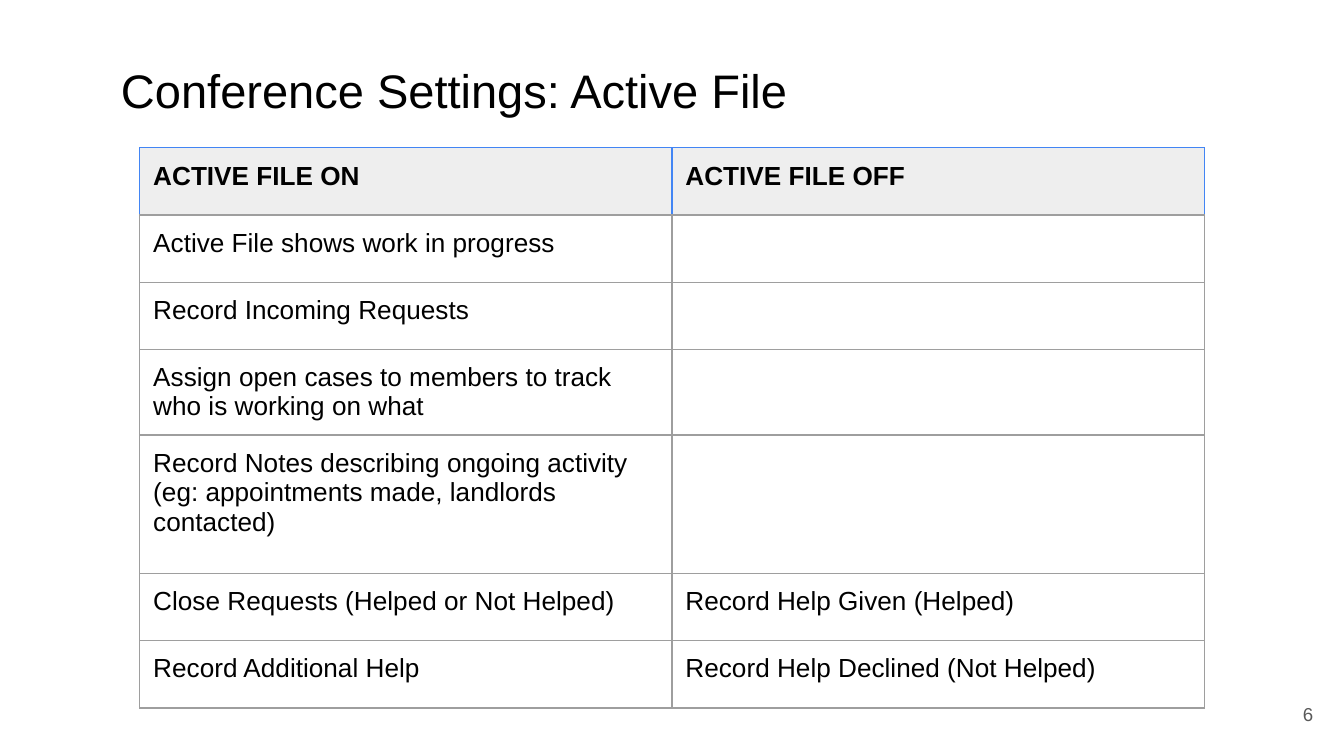
"""Build the Active File settings comparison slide."""
from typing import NamedTuple

from lxml.etree import SubElement
from pptx import Presentation
from pptx.dml.color import RGBColor
from pptx.enum.text import MSO_ANCHOR as ANCHOR, PP_ALIGN as ALIGN
from pptx.oxml.ns import qn
from pptx.util import Inches, Pt

COLORS = {"text": "000000", "number": "595959", "header": "EEEEEE",
          "blue": "4285F4", "gray": "9E9E9E", "page": "FFFFFF"}
INSET = Inches(0.1)


class Row(NamedTuple):
    """Texts and height of one table row."""
    on: str
    off: str = ""
    height: float = 0.5


ROWS = [
    Row("ACTIVE FILE ON", "ACTIVE FILE OFF"),
    Row("Active File shows work in progress"),
    Row("Record Incoming Requests"),
    Row("Assign open cases to members to track who is working on what"),
    Row("Record Notes describing ongoing activity "
        "(eg: appointments made, landlords contacted)", height=1.03),
    Row("Close Requests (Helped or Not Helped)", "Record Help Given (Helped)"),
    Row("Record Additional Help", "Record Help Declined (Not Helped)"),
]


def write(tf, text: str, *, size: float, color: str = "text",
          bold: bool = False, align=ALIGN.LEFT) -> None:
    """Write one formatted paragraph into a text frame."""
    tf.word_wrap = True
    p = tf.paragraphs[0]
    p.alignment = align
    p.font.size = Pt(size)
    if not text:
        return
    r = p.add_run()
    r.text = text
    r.font.name = "Arial"
    r.font.size = Pt(size)
    r.font.bold = bold
    r.font.color.rgb = RGBColor.from_string(COLORS[color])


def set_insets(target) -> None:
    """Give a cell or text frame equal margins."""
    target.margin_left = target.margin_right = INSET
    target.margin_top = target.margin_bottom = INSET


def set_border(cell, side: str, color: str) -> None:
    """Draw one side (L, R, T or B) of a cell."""
    tc_pr = cell._tc.get_or_add_tcPr()
    ln = SubElement(tc_pr, qn(f"a:ln{side}"), w=str(Pt(0.75)))
    SubElement(SubElement(ln, qn("a:solidFill")), qn("a:srgbClr"), val=COLORS[color])
    SubElement(ln, qn("a:prstDash"), val="solid")


def fill_cell(cell, text: str, row: int) -> None:
    """Format one table cell according to its row."""
    header = row == 0
    set_insets(cell)
    for side in "LRTB":
        set_border(cell, side, "blue" if header and side != "B" else "gray")
    if header:
        cell.fill.solid()
        cell.fill.fore_color.rgb = RGBColor.from_string(COLORS["header"])
    else:
        cell.fill.background()
    write(cell.text_frame, text, size=14, bold=header)


def add_comparison(slide, rows: list[Row]) -> None:
    """Add the two-column comparison table."""
    height = sum(row.height for row in rows)
    table = slide.shapes.add_table(len(rows), 2, Inches(1.04), Inches(1.1),
                                   Inches(7.92), Inches(height)).table
    table.horz_banding = False
    for i, row in enumerate(rows):
        table.rows[i].height = Inches(row.height)
        for j, text in enumerate((row.on, row.off)):
            fill_cell(table.cell(i, j), text, i)


def main() -> None:
    """Build and save the slide."""
    prs = Presentation()
    prs.slide_width = Inches(10)
    prs.slide_height = prs.slide_width * 9 // 16
    s = prs.slides.add_slide(prs.slide_layouts[5])
    s.background.fill.solid()
    s.background.fill.fore_color.rgb = RGBColor.from_string(COLORS["page"])

    title = s.shapes.title
    title.left, title.top = Inches(0.8), Inches(0.36)
    title.width, title.height = Inches(8.41), Inches(0.59)
    tf = title.text_frame
    set_insets(tf)
    tf.vertical_anchor = ANCHOR.TOP
    write(tf, "Conference Settings: Active File", size=25.2)

    add_comparison(s, ROWS)

    number = s.shapes.add_textbox(Inches(9.27), Inches(5.1), Inches(0.6), Inches(0.43))
    tf = number.text_frame
    set_insets(tf)
    tf.vertical_anchor = ANCHOR.MIDDLE
    write(tf, "6", size=10, color="number", align=ALIGN.RIGHT)

    prs.save("out.pptx")


if __name__ == "__main__":
    main()
